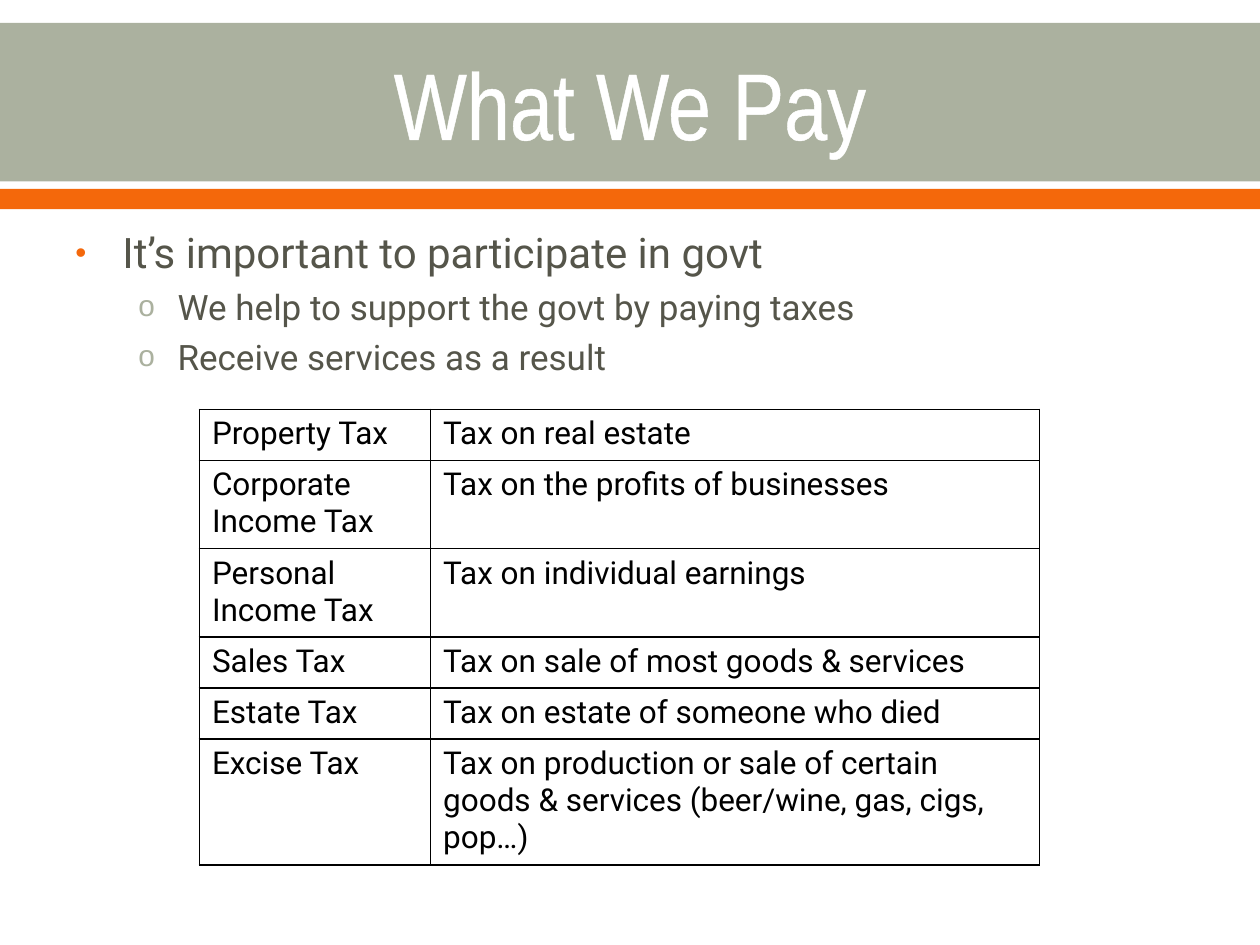
import pptx
import pptx.dml.color
import pptx.enum.shapes
import pptx.enum.text
import pptx.oxml
import pptx.oxml.ns
import pptx.util
from pptx.util import Cm, Pt

COLORS = {
    "sage": "ABB19F",
    "orange": "F4680B",
    "text": "55554A",
    "white": "FFFFFF",
    "black": "000000",
}
TITLE = "What We Pay"
# color, top and height in cm
BANDS = [("sage", 0.46, 3.2), ("orange", 3.81, 0.41)]
# level, text
POINTS = [
    (0, "It’s important to participate in govt"),
    (1, "We help to support the govt by paying taxes"),
    (1, "Receive services as a result"),
]
# size in points, left margin and hanging indent in cm, bullet, its color and percent size
LEVELS = [
    (24, 0.95, 0.95, "•", "orange", 75),
    (20, 2.06, 0.79, "o", "sage", 85),
]
TAXES = [
    ("Property Tax", "Tax on real estate"),
    ("Corporate Income Tax", "Tax on the profits of businesses"),
    ("Personal Income Tax", "Tax on individual earnings"),
    ("Sales Tax", "Tax on sale of most goods & services"),
    ("Estate Tax", "Tax on estate of someone who died"),
    ("Excise Tax", "Tax on production or sale of certain goods & services "
                   "(beer/wine, gas, cigs, pop…)"),
]
COLUMN_WIDTHS = [4.66, 12.27]
ROW_HEIGHT = 1.03


def rgb(name):
    return pptx.dml.color.RGBColor.from_string(COLORS[name])


def xml(markup):
    return pptx.oxml.parse_xml(
        markup.replace(" ", f" {pptx.oxml.ns.nsdecls('a')} ", 1))


def solid_fill(color):
    return f'<a:solidFill><a:srgbClr val="{COLORS[color]}"/></a:solidFill>'


def write(paragraph, text, size, color, font="Roboto", align=None):
    run = paragraph.add_run()
    run.text = text
    run.font.size = Pt(size)
    run.font.name = font
    run.font.color.rgb = rgb(color)
    paragraph.alignment = align
    return run


def add_band(slide, color, top, height, width):
    band = slide.shapes.add_shape(
        pptx.enum.shapes.MSO_SHAPE.RECTANGLE, 0, Cm(top), width, Cm(height))
    band.shadow.inherit = False
    band.fill.solid()
    band.fill.fore_color.rgb = rgb(color)
    band.line.fill.background()
    slide.shapes.title.element.addprevious(band.element)


def format_title(title):
    title.left, title.top, title.width, title.height = Cm(1.27), Cm(0.51), Cm(22.86), Cm(3.1)
    frame = title.text_frame
    frame.vertical_anchor = pptx.enum.text.MSO_ANCHOR.MIDDLE
    run = write(frame.paragraphs[0], TITLE, 54, "white", font="Arial Narrow",
                align=pptx.enum.text.PP_ALIGN.CENTER)
    outline = xml(f'<a:ln w="{Pt(1.1)}">{solid_fill("white")}</a:ln>')
    run.font._element.insert(0, outline)


def add_points(slide):
    frame = slide.shapes.add_textbox(Cm(1.27), Cm(4.45), Cm(22.86), Cm(12.57)).text_frame
    frame.word_wrap = True
    for index, (level, text) in enumerate(POINTS):
        size, margin, hanging, bullet, color, percent = LEVELS[level]
        paragraph = frame.add_paragraph() if index else frame.paragraphs[0]
        write(paragraph, text, size, "text")
        paragraph.level = level
        paragraph.space_before = Pt(round(size * 0.23, 1))
        properties = paragraph._p.get_or_add_pPr()
        properties.set("marL", str(Cm(margin)))
        properties.set("indent", str(-Cm(hanging)))
        bullet_color = f'<a:srgbClr val="{COLORS[color]}"/>'
        for markup in (f'<a:buClr >{bullet_color}</a:buClr>',
                       f'<a:buSzPct val="{percent * 1000}"/>',
                       '<a:buFont typeface="Arial"/>',
                       f'<a:buChar char="{bullet}"/>'):
            properties.append(xml(markup))


def add_tax_table(slide):
    table = slide.shapes.add_table(
        len(TAXES), len(COLUMN_WIDTHS), Cm(4.02), Cm(8.25),
        Cm(sum(COLUMN_WIDTHS)), Cm(ROW_HEIGHT * len(TAXES))).table
    table.first_row = table.horz_banding = False
    for column, width in zip(table.columns, COLUMN_WIDTHS):
        column.width = Cm(width)
    for row_index, row in enumerate(TAXES):
        for column_index, text in enumerate(row):
            cell = table.cell(row_index, column_index)
            write(cell.text_frame.paragraphs[0], text, 18, "black")
            properties = cell._tc.get_or_add_tcPr()
            for side in ("lnL", "lnR", "lnT", "lnB"):
                properties.append(xml(
                    f'<a:{side} w="{Pt(1)}">{solid_fill("black")}</a:{side}>'))
            cell.fill.background()


def main():
    presentation = pptx.Presentation()
    presentation.slide_width, presentation.slide_height = Cm(25.4), Cm(19.05)
    slide = presentation.slides.add_slide(presentation.slide_layouts.get_by_name("Title Only"))
    for color, top, height in BANDS:
        add_band(slide, color, top, height, presentation.slide_width)
    format_title(slide.shapes.title)
    add_points(slide)
    add_tax_table(slide)
    presentation.save("out.pptx")


if __name__ == "__main__":
    main()
